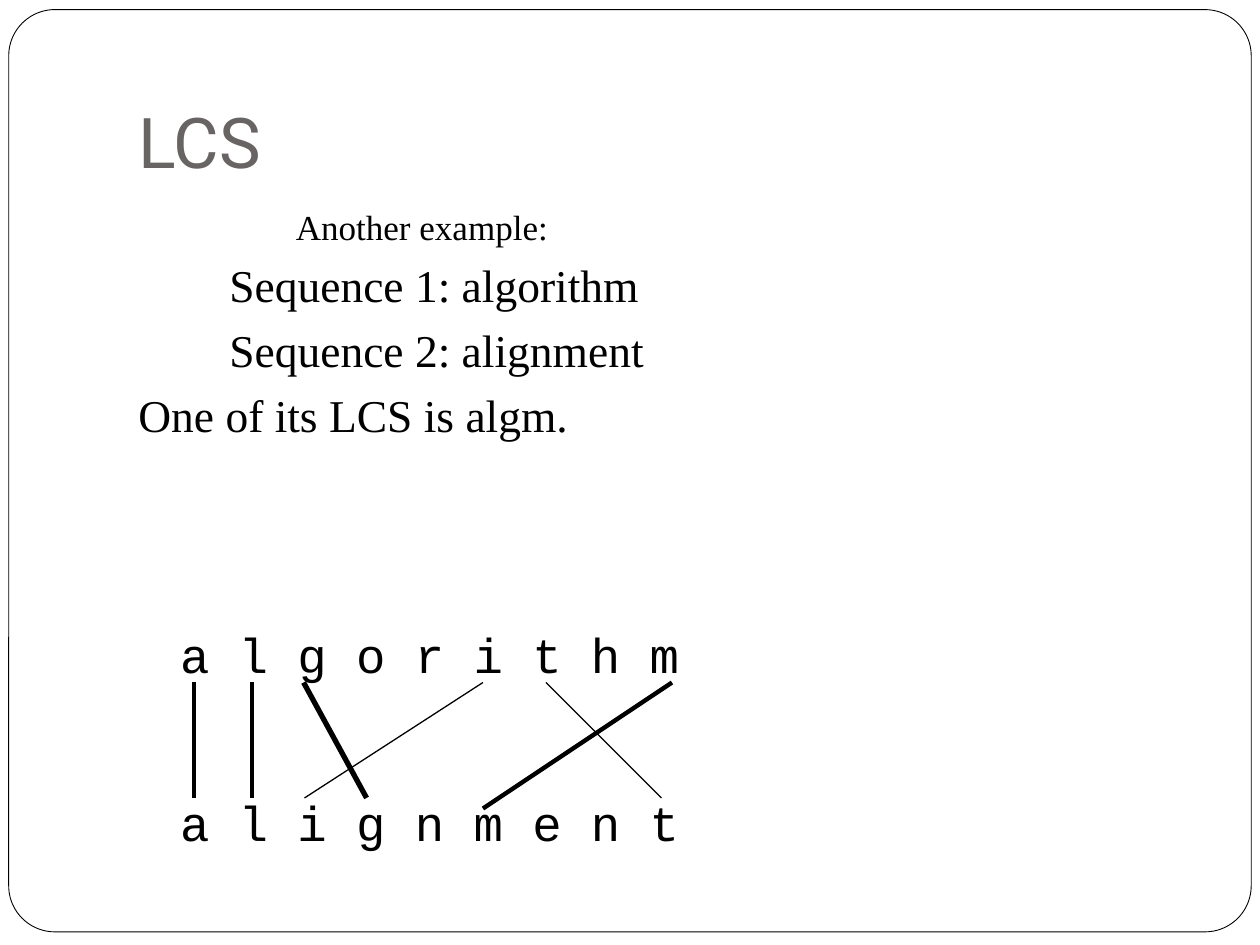
from pptx import Presentation
from pptx.dml.color import RGBColor
from pptx.enum.shapes import MSO_CONNECTOR, MSO_SHAPE
from pptx.enum.text import MSO_ANCHOR
from pptx.oxml.ns import qn
from pptx.util import Pt
from lxml import etree

BLACK = RGBColor(0x00, 0x00, 0x00)
WHITE = RGBColor(0xFF, 0xFF, 0xFF)
GRAY = RGBColor(0x69, 0x64, 0x64)
LINE = MSO_CONNECTOR.STRAIGHT
ROUND = MSO_SHAPE.ROUNDED_RECTANGLE
BOTTOM = MSO_ANCHOR.BOTTOM

deck = Presentation()
deck.slide_width = Pt(720)
deck.slide_height = Pt(540)
slide = deck.slides.add_slide(deck.slide_layouts[6])
shapes = slide.shapes


def add_box(left, top, width, height):
    box = shapes.add_textbox(Pt(left), Pt(top), Pt(width), Pt(height))
    box.text_frame.word_wrap = True
    return box.text_frame


def add_run(para, text, face, size, color):
    run = para.add_run()
    run.text = text
    run.font.name = face
    run.font.size = Pt(size)
    run.font.color.rgb = color


frame = shapes.add_shape(ROUND, Pt(5), Pt(5.5), Pt(710), Pt(527))
frame.adjustments[0] = 0.05
frame.shadow.inherit = False
frame.fill.solid()
frame.fill.fore_color.rgb = WHITE
frame.line.color.rgb = BLACK
frame.line.width = Pt(0.5)

title = add_box(72, 21.6, 612, 90)
title.vertical_anchor = BOTTOM
title.margin_bottom = Pt(7.2)
add_run(title.paragraphs[0], "LCS", "Roboto", 40, GRAY)

body = add_box(72, 113.8, 612, 360)
items = [
    ("Another example:", 20, 90, 3),
    ("Sequence 1: algorithm", 26, 52, 5.8),
    ("Sequence 2: alignment", 26, 52, 5.8),
    ("One of its LCS is algm.", 26, 0, 5.8),
]
for i, (text, size, indent, gap) in enumerate(items):
    para = body.add_paragraph() if i else body.paragraphs[0]
    para.space_before = Pt(gap)
    para._p.get_or_add_pPr().set("marL", str(Pt(indent)))
    add_run(para, text, "Times New Roman", size, BLACK)

for top, word in [(353.6, "algorithm"), (449.6, "alignment")]:
    row = add_box(95.8, top, 420, 39)
    add_run(row.paragraphs[0], " ".join(word), "Courier New", 28, BLACK)

links = [
    (111, 111, 456, 2.5),
    (144, 144, 456, 2.5),
    (173.5, 209.5, 456, 3),
    (276, 174, 456, 0.75),
    (312, 378, 456, 0.75),
    (384, 276, 462, 2.5),
]
for start, end, foot, width in links:
    link = shapes.add_connector(LINE, Pt(start), Pt(390), Pt(end), Pt(foot))
    link.line.color.rgb = BLACK
    link.line.width = Pt(width)
    etree.SubElement(link._element.spPr, qn("a:effectLst"))

deck.save("out.pptx")
